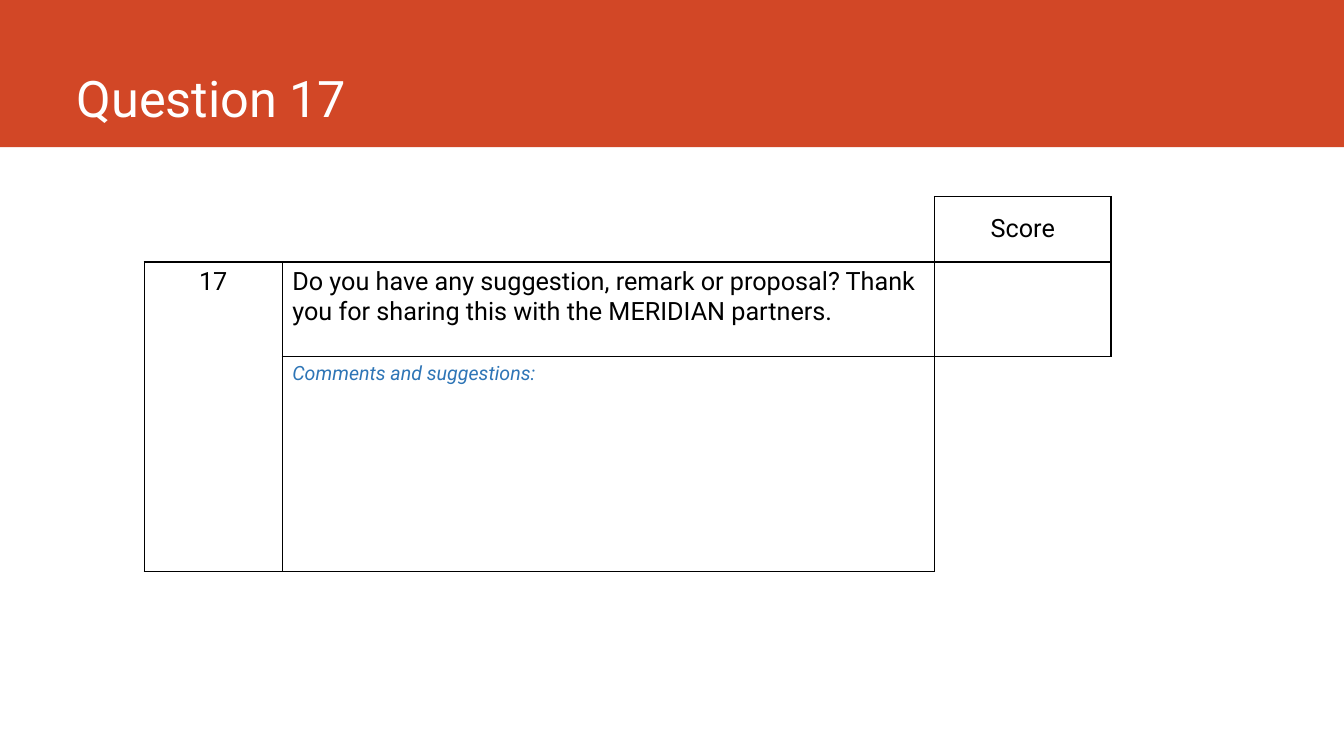
import pptx
import pptx.dml.color
import pptx.enum.shapes
import pptx.enum.text
import pptx.oxml.ns
import pptx.util
from lxml import etree

Inches, Pt = pptx.util.Inches, pptx.util.Pt
RGBColor = pptx.dml.color.RGBColor
PP_ALIGN = pptx.enum.text.PP_ALIGN
MSO_ANCHOR = pptx.enum.text.MSO_ANCHOR

ORANGE = RGBColor(0xD2, 0x47, 0x26)
WHITE = RGBColor(0xFF, 0xFF, 0xFF)
BLACK = RGBColor(0, 0, 0)
BLUE = RGBColor(0x2E, 0x75, 0xB6)
FONT = "Roboto"

TITLE = "Question 17"
COLUMN_WIDTHS = [1.37, 6.47, 1.75]
ROW_HEIGHTS = [0.65, 0.94, 2.13]
# (row, column): text, size, colour, italic, alignment, anchor
ENTRIES = {
    (0, 2): ("Score", 18, BLACK, False, PP_ALIGN.CENTER, MSO_ANCHOR.MIDDLE),
    (1, 0): ("17", 18, BLACK, False, PP_ALIGN.CENTER, MSO_ANCHOR.TOP),
    (1, 1): ("Do you have any suggestion, remark or proposal? Thank you for "
             "sharing this with the MERIDIAN partners.",
             18, BLACK, False, PP_ALIGN.LEFT, MSO_ANCHOR.TOP),
    (2, 1): ("Comments and suggestions:", 14, BLUE, True, PP_ALIGN.LEFT, MSO_ANCHOR.TOP),
}
MERGES = [((0, 0), (0, 1)), ((1, 0), (2, 0))]
# Cells outside the grid keep only the sides they share with it
OPEN_CELLS = {(0, 0): "B", (0, 1): "RB", (2, 2): "LT"}


def add_text(paragraph, text, size, color, italic=False):
    run = paragraph.add_run()
    run.text = text
    run.font.name = FONT
    run.font.size = Pt(size)
    run.font.color.rgb = color
    run.font.italic = italic


def set_borders(cell, drawn_sides):
    """Draw the given sides (letters of LRTB) in black and hide the others."""
    properties = cell._tc.get_or_add_tcPr()
    for position, side in enumerate("LRTB"):
        line = etree.Element(pptx.oxml.ns.qn(f"a:ln{side}"), w=str(Pt(1)))
        if side in drawn_sides:
            fill = etree.SubElement(line, pptx.oxml.ns.qn("a:solidFill"))
            etree.SubElement(fill, pptx.oxml.ns.qn("a:srgbClr"), val=str(BLACK))
        else:
            etree.SubElement(line, pptx.oxml.ns.qn("a:noFill"))
        properties.insert(position, line)


def add_title(slide):
    band = slide.shapes.add_shape(pptx.enum.shapes.MSO_SHAPE.RECTANGLE,
                                  0, 0, Inches(13.33), Inches(1.46))
    band.shadow.inherit = False
    band.fill.solid()
    band.fill.fore_color.rgb = ORANGE
    band.line.fill.background()

    title = slide.shapes.title
    band._element.addnext(title._element)
    title.left, title.top = Inches(0.66), Inches(0)
    title.width, title.height = Inches(11.76), Inches(1.32)
    title.text_frame.vertical_anchor = MSO_ANCHOR.BOTTOM
    heading = title.text_frame.paragraphs[0]
    heading.alignment = PP_ALIGN.LEFT
    add_text(heading, TITLE, 36, WHITE)


def add_question_table(slide):
    table = slide.shapes.add_table(
        len(ROW_HEIGHTS), len(COLUMN_WIDTHS), Inches(1.43), Inches(1.95),
        Inches(sum(COLUMN_WIDTHS)), Inches(sum(ROW_HEIGHTS))).table
    table.first_row = table.horz_banding = False
    for column, width in zip(table.columns, COLUMN_WIDTHS):
        column.width = Inches(width)
    for row, height in zip(table.rows, ROW_HEIGHTS):
        row.height = Inches(height)

    for r in range(len(ROW_HEIGHTS)):
        for c in range(len(COLUMN_WIDTHS)):
            cell = table.cell(r, c)
            cell.fill.background()
            set_borders(cell, OPEN_CELLS.get((r, c), "LRTB"))
            if (r, c) in ENTRIES:
                text, size, color, italic, alignment, anchor = ENTRIES[r, c]
                cell.vertical_anchor = anchor
                paragraph = cell.text_frame.paragraphs[0]
                paragraph.alignment = alignment
                add_text(paragraph, text, size, color, italic)
    for first, last in MERGES:
        table.cell(*first).merge(table.cell(*last))


def main():
    presentation = pptx.Presentation()
    presentation.slide_width = Inches(13.33)
    presentation.slide_height = Inches(7.5)
    slide = presentation.slides.add_slide(presentation.slide_layouts[5])
    add_title(slide)
    add_question_table(slide)
    presentation.save("out.pptx")


if __name__ == "__main__":
    main()
